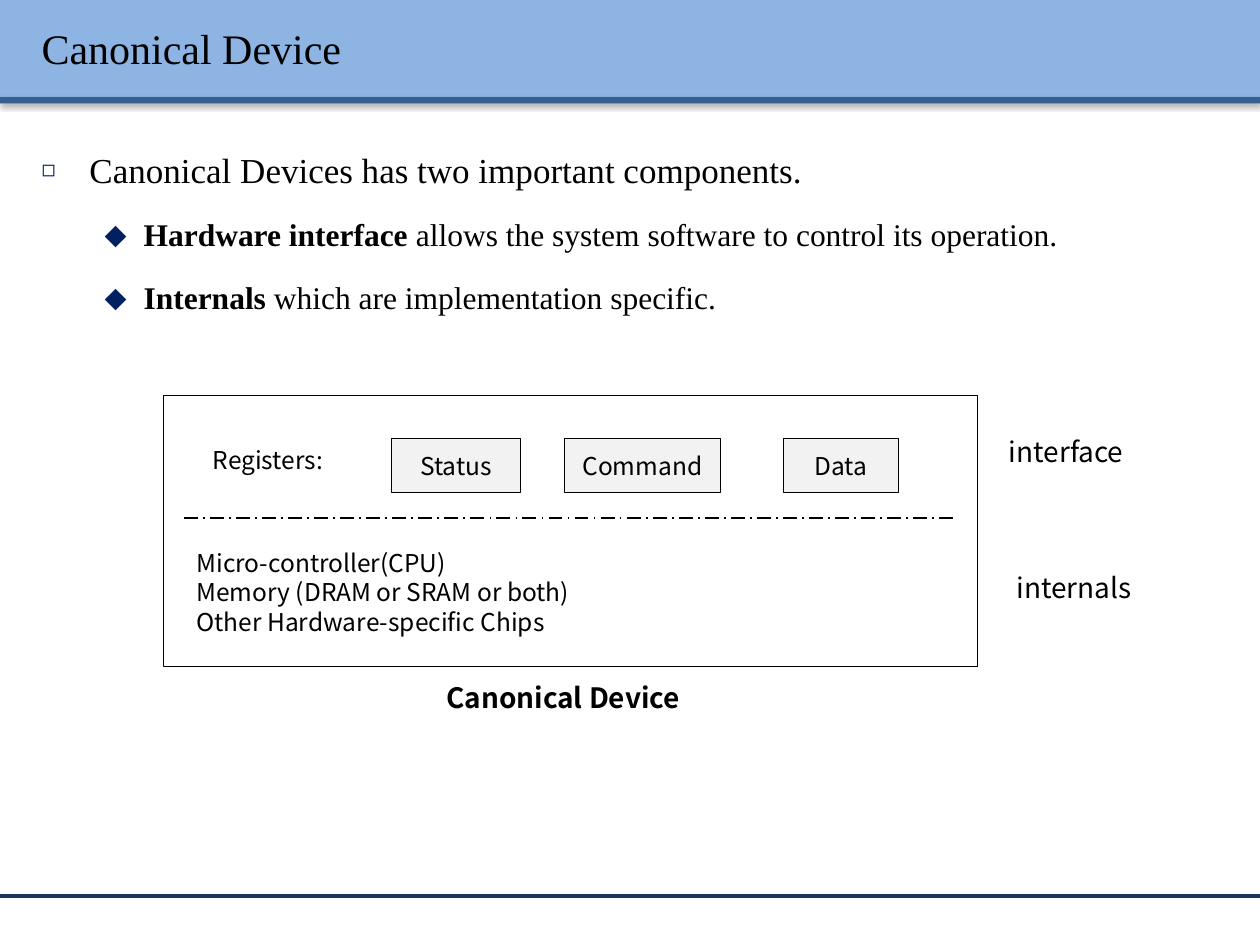
from lxml import etree
from pptx import Presentation
from pptx.dml.color import RGBColor
from pptx.enum.dml import MSO_LINE
from pptx.enum.shapes import MSO_CONNECTOR, MSO_SHAPE
from pptx.enum.text import MSO_ANCHOR, MSO_AUTO_SIZE, PP_ALIGN
from pptx.oxml.ns import qn
from pptx.util import Inches, Pt

RECTANGLE = MSO_SHAPE.RECTANGLE
STRAIGHT = MSO_CONNECTOR.STRAIGHT
DASH_DOT = MSO_LINE.LONG_DASH_DOT
LEFT, CENTER = PP_ALIGN.LEFT, PP_ALIGN.CENTER
TOP, MIDDLE = MSO_ANCHOR.TOP, MSO_ANCHOR.MIDDLE
NO_AUTOFIT = MSO_AUTO_SIZE.NONE
SERIF, SANS = "Times New Roman", "Noto Sans CJK KR"
BLACK, NAVY = "000000", "002060"

TITLE = "Canonical Device"
BULLETS = [
    (0, "", "Canonical Devices has two important components."),
    (1, "Hardware interface", " allows the system software to control its operation."),
    (1, "Internals", " which are implementation specific."),
]
LEVELS = [
    dict(size=20, margin=0.38, indent=-0.38, symbol="◻", scale=65),
    dict(size=18, margin=0.81, indent=-0.31, symbol="⬥", scale=100),
]
BARS = [(0, 0.77, "8EB4E3"), (0.77, 0.05, "376092")]
REGISTERS = [("Status", 3.11, 1.02), ("Command", 4.48, 1.24), ("Data", 6.22, 0.91)]
REGISTER_TOP, REGISTER_HEIGHT = 3.48, 0.43
INTERNALS = [
    "Micro-controller(CPU)",
    "Memory (DRAM or SRAM or both)",
    "Other Hardware-specific Chips",
]
LABELS = [
    (["Registers:"], (1.59, 3.48, 1.6, 0.34), dict(size=14)),
    (INTERNALS, (1.46, 4.3, 4.25, 0.81), dict(size=14)),
    (["Canonical Device"], (3.16, 5.35, 2.62, 0.37),
     dict(size=16, bold=True, align=CENTER)),
    (["interface"], (7.91, 3.4, 1.6, 0.37), dict(size=16)),
    (["internals"], (7.97, 4.48, 1.6, 0.37), dict(size=16)),
]


def color(value):
    return RGBColor.from_string(value)


def add_node(parent, tag, **attributes):
    values = {name: str(value) for name, value in attributes.items()}
    return etree.SubElement(parent, qn(tag), values)


def add_shadow(properties, blur, distance, direction, alpha):
    effects = add_node(properties, "a:effectLst")
    shadow = add_node(effects, "a:outerShdw", blurRad=Pt(blur), dist=Pt(distance),
                      dir=direction * 60000, rotWithShape=0)
    shade = add_node(shadow, "a:srgbClr", val=BLACK)
    add_node(shade, "a:alpha", val=alpha * 1000)


def add_run(paragraph, text, size=14, font=SANS, bold=False):
    run = paragraph.add_run()
    run.text = text
    run.font.size = Pt(size)
    run.font.name = font
    run.font.bold = bold
    run.font.color.rgb = color(BLACK)
    return run


def write(frame, lines, align=LEFT, anchor=TOP, **style):
    frame.word_wrap = True
    frame.auto_size = NO_AUTOFIT
    frame.vertical_anchor = anchor
    for index, line in enumerate(lines):
        paragraph = frame.add_paragraph() if index else frame.paragraphs[0]
        paragraph.alignment = align
        add_run(paragraph, line, **style)


def place(shape, left, top, width, height):
    shape.left, shape.top = Inches(left), Inches(top)
    shape.width, shape.height = Inches(width), Inches(height)


def add_rectangle(slide, box, fill=None, line=None):
    shape = slide.shapes.add_shape(RECTANGLE, *map(Inches, box))
    shape.shadow.inherit = False
    if fill:
        shape.fill.solid()
        shape.fill.fore_color.rgb = color(fill)
    else:
        shape.fill.background()
    if line:
        shape.line.color.rgb = color(line)
        shape.line.width = Pt(0.75)
    else:
        shape.line.fill.background()
    return shape


def add_line(slide, left, right, y, line, width):
    connector = slide.shapes.add_connector(
        STRAIGHT, Inches(left), Inches(y), Inches(right), Inches(y))
    connector.line.color.rgb = color(line)
    connector.line.width = Pt(width)
    add_node(connector.element.spPr, "a:effectLst")
    return connector


def add_background(slide, title):
    for top, height, fill in BARS:
        bar = add_rectangle(slide, (0, top, 10, height), fill)
        properties = bar.element.spPr
        properties.remove(properties.find(qn("a:effectLst")))
        add_shadow(properties, 3.1, 1.6, 90, 38)
        title.element.addprevious(bar.element)
    footer_line = add_line(slide, 0, 10, 7.11, "17375E", 2)
    title.element.addprevious(footer_line.element)


def fill_title(title):
    place(title, 0.23, 0.06, 9.61, 0.64)
    write(title.text_frame, [TITLE], anchor=MIDDLE, size=24, font=SERIF)
    run = title.text_frame.paragraphs[0].runs[0]
    properties = run.font.fill._xPr
    add_shadow(properties, 0, 1, 45, 100)
    properties.find(qn("a:solidFill")).addnext(properties.find(qn("a:effectLst")))


def fill_body(body):
    place(body, 0.23, 0.96, 9.61, 4.6)
    frame = body.text_frame
    frame.auto_size = NO_AUTOFIT
    for index, (level, lead, text) in enumerate(BULLETS):
        style = LEVELS[level]
        paragraph = frame.add_paragraph() if index else frame.paragraphs[0]
        paragraph.level = level
        paragraph.line_spacing = 1.5
        paragraph.space_before = Pt(style["size"] * 0.2)
        properties = paragraph._p.get_or_add_pPr()
        properties.set("marL", str(Inches(style["margin"])))
        properties.set("indent", str(Inches(style["indent"])))
        add_node(add_node(properties, "a:buClr"), "a:srgbClr", val=NAVY)
        add_node(properties, "a:buSzPct", val=style["scale"] * 1000)
        add_node(properties, "a:buChar", char=style["symbol"])
        if lead:
            add_run(paragraph, lead, style["size"], SERIF, bold=True)
        add_run(paragraph, text, style["size"], SERIF)


def add_device(slide):
    add_rectangle(slide, (1.3, 3.14, 6.46, 2.15), line=BLACK)
    divider = add_line(slide, 1.46, 7.6, 4.11, BLACK, 1)
    divider.line.dash_style = DASH_DOT
    for name, left, width in REGISTERS:
        box = (left, REGISTER_TOP, width, REGISTER_HEIGHT)
        register = add_rectangle(slide, box, "F2F2F2", BLACK)
        frame = register.text_frame
        frame.margin_left = frame.margin_right = 0
        write(frame, [name], align=CENTER, anchor=MIDDLE)
    for lines, box, style in LABELS:
        label = slide.shapes.add_textbox(*map(Inches, box))
        write(label.text_frame, lines, **style)


def main():
    presentation = Presentation()
    presentation.slide_width, presentation.slide_height = Inches(10), Inches(7.5)
    slide = presentation.slides.add_slide(presentation.slide_layouts[1])
    title, body = slide.shapes.title, slide.placeholders[1]
    add_background(slide, title)
    fill_title(title)
    fill_body(body)
    add_device(slide)
    presentation.save("out.pptx")


if __name__ == "__main__":
    main()
